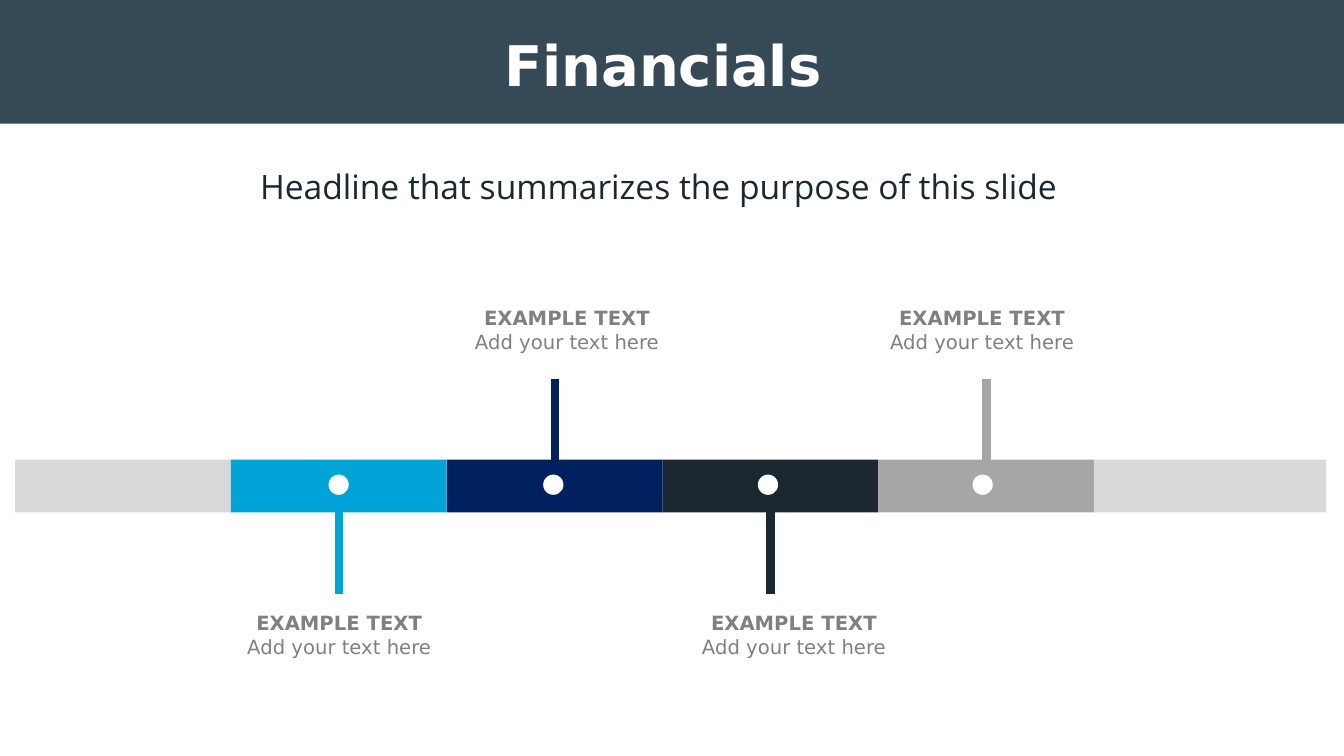
from lxml import etree
from pptx import Presentation
from pptx.dml.color import RGBColor
from pptx.enum.shapes import MSO_CONNECTOR as CONNECTOR, MSO_SHAPE as SHAPE
from pptx.enum.text import MSO_AUTO_SIZE as AUTO_SIZE, PP_ALIGN as ALIGN
from pptx.oxml.ns import qn
from pptx.util import Cm, Pt

COLORS = {
    "band": "2D4251", "blue": "00A3D8", "navy": "002060", "dark": "1B2831",
    "gray": "A6A6A6", "light": "D9D9D9", "label": "808080", "white": "FFFFFF",
}

prs = Presentation()
prs.slide_width, prs.slide_height = Cm(33.87), Cm(19.05)
s = prs.slides.add_slide(prs.slide_layouts[6])


def add_shape(kind, x, y, w, h, color):
    sp = s.shapes.add_shape(kind, Cm(x), Cm(y), Cm(w), Cm(h))
    sp.shadow.inherit = False
    sp.fill.solid()
    sp.fill.fore_color.rgb = RGBColor.from_string(COLORS[color])
    sp.line.fill.background()
    return sp


def add_text(text, x, y, w, h, size=14, color="label", font="DejaVu Sans",
             bold=False, wrap=True, second_line=None):
    tf = s.shapes.add_textbox(Cm(x), Cm(y), Cm(w), Cm(h)).text_frame
    tf.word_wrap = wrap
    tf.auto_size = AUTO_SIZE.SHAPE_TO_FIT_TEXT
    p = tf.paragraphs[0]
    p.alignment = ALIGN.CENTER
    lines = [(text, bold)]
    if second_line:
        lines.append((second_line, False))
    for i, (line, is_bold) in enumerate(lines):
        if i:
            p.add_line_break()
        r = p.add_run()
        r.text = line
        r.font.name, r.font.size, r.font.bold = font, Pt(size), is_bold
        r.font.color.rgb = RGBColor.from_string(COLORS[color])


# Timeline bar
BAR_X, BAR_Y, BAR_W, BAR_H = 0.38, 11.58, 5.44, 1.33
bar_colors = ["light", "blue", "navy", "dark", "gray", "light"]
bars = []
for i, color in enumerate(bar_colors):
    w = 5.84 if i == len(bar_colors) - 1 else BAR_W
    bars.append(add_shape(SHAPE.RECTANGLE, BAR_X + i * BAR_W, BAR_Y, w, BAR_H, color))

# Milestones: dot, pin and label, alternating below and above the bar
label_lefts = [5.69, 11.43, 17.15, 21.89]
for i, label_x in enumerate(label_lefts):
    bar, color = bars[i + 1], bar_colors[i + 1]
    below = i % 2 == 0
    add_shape(SHAPE.OVAL, 8.28 + i * 5.41, 11.96, 0.51, 0.51, "white")

    pin_x = bar.left + bar.width // 2
    pin_y = Cm(14.96 if below else 9.55)
    pin = s.shapes.add_connector(CONNECTOR.STRAIGHT, pin_x, pin_y, pin_x, bar.top)
    pin.end_connect(bar, 2 if below else 0)
    pin.line.width = Pt(6)
    pin.line.color.rgb = RGBColor.from_string(COLORS[color])
    etree.SubElement(pin._element.spPr, qn("a:effectLst"))

    add_text("EXAMPLE TEXT", label_x, 15.27 if below else 7.59, 5.72, 1.45,
             bold=True, second_line="Add your text here")

# Headline
add_text("Headline that summarizes the purpose of this slide",
         2.77, 4.06, 27.66, 1.27, size=24, color="dark", font="Open Sans")

# Title band
band = add_shape(SHAPE.RECTANGLE, 0, 0, 33.87, 3.12, "band")
band_color = band._element.spPr.find(qn("a:solidFill"))[0]
etree.SubElement(band_color, qn("a:alpha"), val="96000")
add_text("Financials", 12.45, 0.64, 8.51, 1.96, size=40, color="white",
         bold=True, wrap=False)

prs.save("out.pptx")
